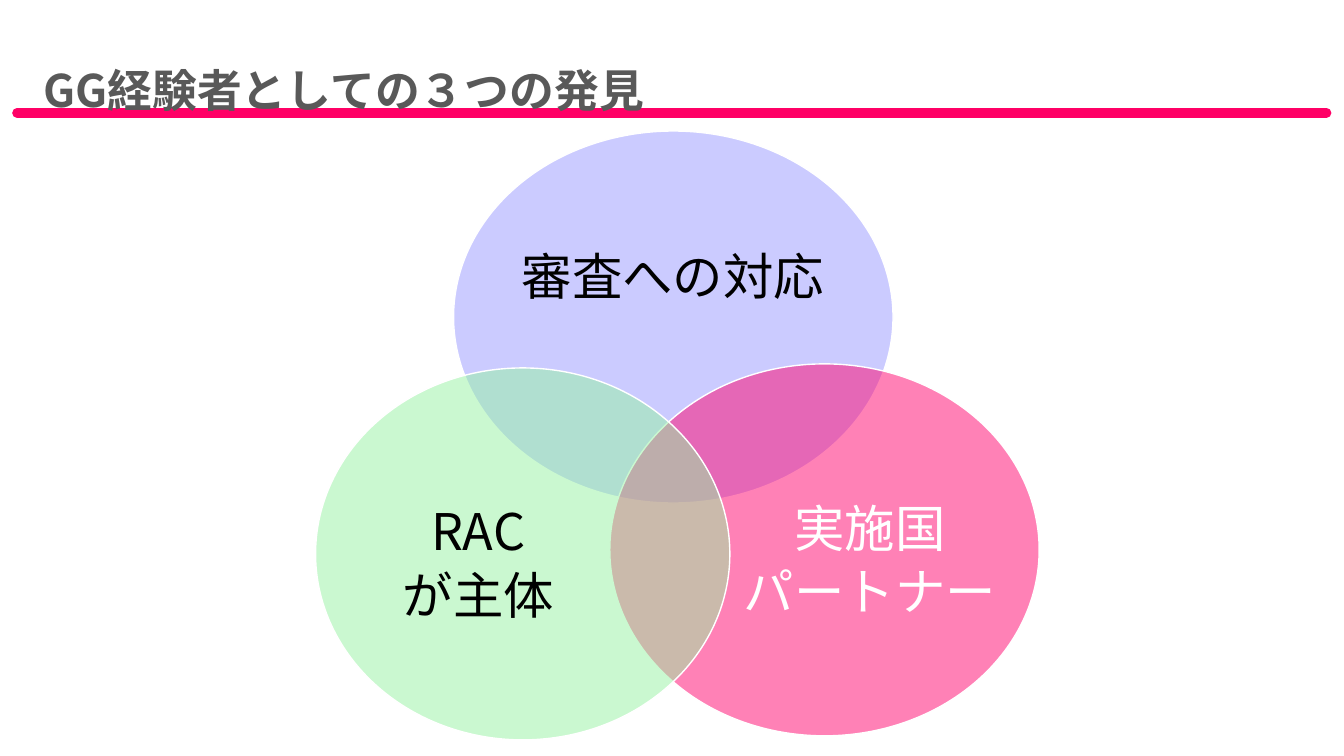
from lxml.etree import SubElement
from pptx import Presentation
from pptx.dml.color import RGBColor
from pptx.enum.shapes import MSO_CONNECTOR as Connector, MSO_SHAPE as Shape
from pptx.enum.text import MSO_ANCHOR as Anchor, PP_ALIGN as Align
from pptx.oxml.ns import qn
from pptx.util import Pt

FONT = "Noto Sans CJK JP"


def paint(color_format, color):
    """Set a colour from a hex string."""
    color_format.rgb = RGBColor.from_string(color)


def set_font(paragraph, size, color, bold=False):
    """Set the font of a paragraph for Latin and East Asian text."""
    font = paragraph.font
    font.name, font.size, font.bold = FONT, Pt(size), bold
    paint(font.color, color)
    SubElement(font._element, qn("a:ea"), typeface=FONT)


def add_title(slide, text):
    """Add the slide title."""
    frame = slide.shapes.add_textbox(Pt(23.8), Pt(2.9), Pt(911.5), Pt(70.6)).text_frame
    frame.word_wrap = True
    paragraph = frame.paragraphs[0]
    paragraph.text = text
    paragraph.line_spacing = 2.0
    set_font(paragraph, 32, "595959", bold=True)


def add_rule(slide, left, right, top, color):
    """Add a thick horizontal line with round ends."""
    rule = slide.shapes.add_connector(Connector.STRAIGHT, Pt(left), Pt(top), Pt(right), Pt(top))
    rule.line.width = Pt(7)
    paint(rule.line.color, color)
    rule.line._get_or_add_ln().set("cap", "rnd")
    SubElement(rule._element.spPr, qn("a:effectLst"))


def add_circle(slide, left, top, width, color):
    """Add a half-transparent ellipse with a white outline."""
    circle = slide.shapes.add_shape(Shape.OVAL, Pt(left), Pt(top), Pt(width), Pt(265.7))
    circle.shadow.inherit = False
    circle.fill.solid()
    paint(circle.fill.fore_color, color)
    fill_color = circle._element.spPr.find(qn("a:solidFill"))[0]
    SubElement(fill_color, qn("a:alpha"), val="50000")
    paint(circle.line.color, "FFFFFF")
    circle.line.width = Pt(1)


def add_label(slide, box, lines, color):
    """Add centred text, one paragraph per line."""
    frame = slide.shapes.add_textbox(*map(Pt, box)).text_frame
    frame.word_wrap = True
    frame.vertical_anchor = Anchor.MIDDLE
    frame.margin_left = frame.margin_right = frame.margin_top = frame.margin_bottom = 0
    frame.text = "\n".join(lines)
    for paragraph in frame.paragraphs:
        paragraph.alignment = Align.CENTER
        paragraph.line_spacing = 0.9
        paragraph.space_after = Pt(6.5)
        set_font(paragraph, 36, color)


def main():
    """Build the slide and save it."""
    presentation = Presentation()
    presentation.slide_width, presentation.slide_height = Pt(960), Pt(540)
    slide = presentation.slides.add_slide(presentation.slide_layouts[6])
    add_rule(slide, 12.2, 947.5, 80.6, "FF0066")
    add_title(slide, "GG経験者としての３つの発見")
    findings = [
        ((324, 93.6, 313.9), "9999FF", (365.8, 139.7, 229.7, 119.5), ["審査への対応"], "000000"),
        ((435.6, 259.9, 306.7), "FF056F", (529.2, 329, 184.3, 146.2), ["実施国", "パートナー"], "FFFFFF"),
        ((225.4, 262.8, 295.9), "97F3A2", (252.7, 331.2, 177.8, 146.2), ["RAC", "が主体"], "000000"),
    ]
    for circle, fill, box, lines, color in findings:
        add_circle(slide, *circle, fill)
        add_label(slide, box, lines, color)
    presentation.save("out.pptx")


if __name__ == "__main__":
    main()
